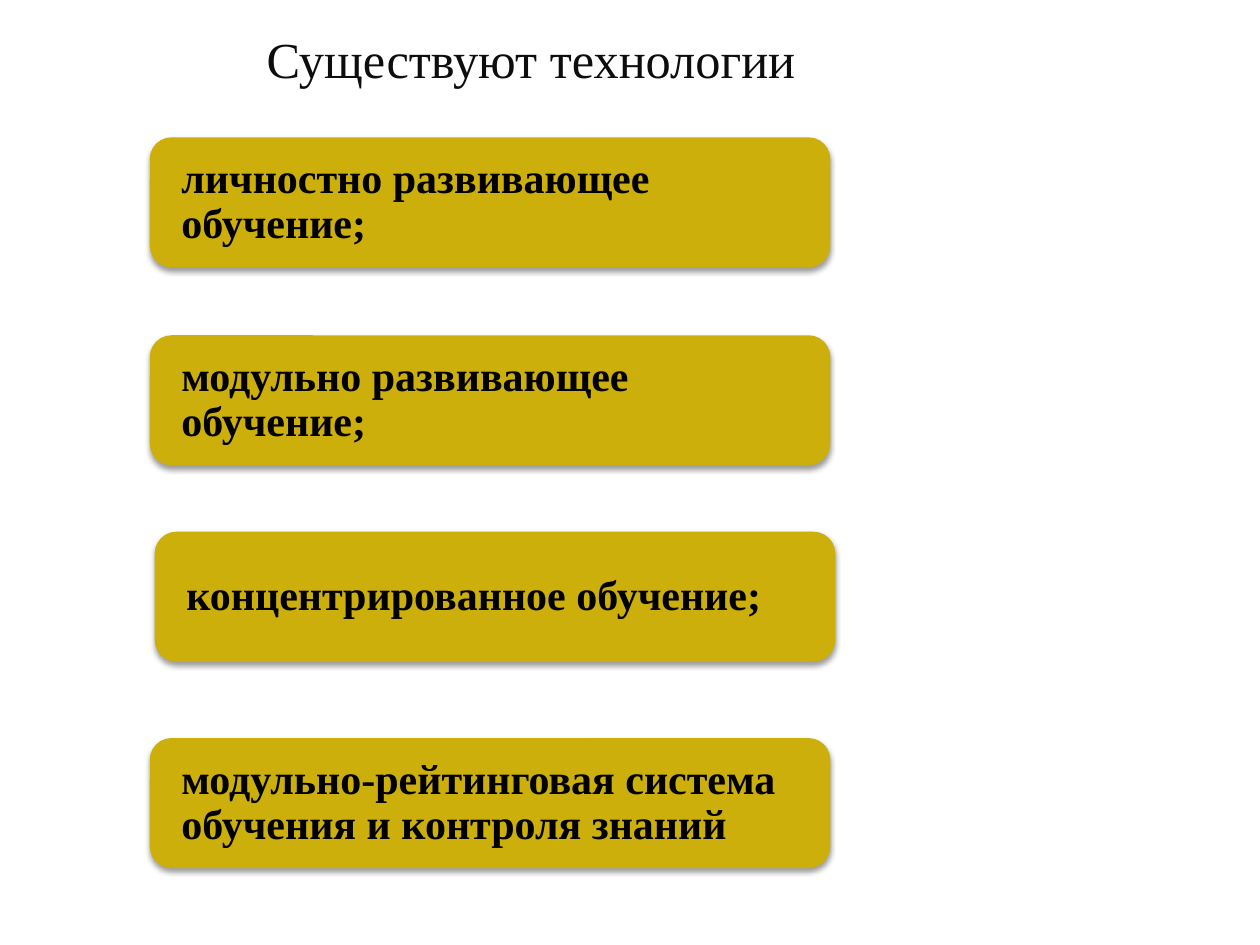
"""Build a slide that lists teaching technologies in rounded boxes."""
from lxml import etree
from pptx import Presentation
from pptx.dml.color import RGBColor
from pptx.enum.shapes import MSO_SHAPE as Shape
from pptx.enum.text import MSO_ANCHOR as Anchor, PP_ALIGN as Align
from pptx.oxml.ns import qn
from pptx.util import Cm, Pt

TITLE = "Существуют технологии"
LEFT, SHIFTED = 3.02, 3.12
BOXES = [
    ("личностно развивающее обучение;", LEFT, 2.77),
    ("модульно развивающее обучение;", LEFT, 6.76),
    ("концентрированное обучение;", SHIFTED, 10.72),
    ("модульно-рейтинговая система обучения и контроля знаний", LEFT, 14.88),
]
BOX_W, BOX_H = 13.72, 2.62
FONT = "Times New Roman"
TITLE_FONT = {"name": FONT, "size": Pt(28.8), "bold": False}
BOX_FONT = {"name": FONT, "size": Pt(24), "bold": True}
TITLE_FRAME = {"word_wrap": True, "vertical_anchor": Anchor.MIDDLE}
BOX_FRAME = TITLE_FRAME | {
    "margin_left": Cm(0.51), "margin_right": Cm(0.51),
    "margin_top": 0, "margin_bottom": 0,
}
SHADOW = {"blurRad": Pt(3.1), "dist": Pt(2), "dir": 90 * 60000, "rotWithShape": 0}


def rgb(color):
    return RGBColor.from_string(color)


def apply(obj, values):
    for name, value in values.items():
        setattr(obj, name, value)


def write(sp, text, frame, para, font, color):
    tf = sp.text_frame
    apply(tf, frame)
    p = tf.paragraphs[0]
    apply(p, para)
    r = p.add_run()
    r.text = text
    apply(r.font, font)
    r.font.color.rgb = rgb(color)


def add_shadow(sp, color, opacity):
    sp.shadow.inherit = False
    effects = sp._element.spPr.find(qn("a:effectLst"))
    shadow = etree.SubElement(effects, qn("a:outerShdw"))
    for name, value in SHADOW.items():
        shadow.set(name, str(value))
    clr = etree.SubElement(shadow, qn("a:srgbClr"), val=color)
    etree.SubElement(clr, qn("a:alpha"), val=str(opacity * 1000))


def add_box(s, text, left, top):
    sp = s.shapes.add_shape(Shape.ROUNDED_RECTANGLE, Cm(left), Cm(top), Cm(BOX_W), Cm(BOX_H))
    sp.fill.solid()
    sp.fill.fore_color.rgb = rgb("CCAF0A")
    sp.line.fill.background()
    add_shadow(sp, "000000", 38)
    para = {"alignment": Align.LEFT, "line_spacing": 0.9}
    write(sp, text, BOX_FRAME, para, BOX_FONT, "000000")


def main():
    prs = Presentation()
    prs.slide_width, prs.slide_height = Cm(25.4), Cm(19.05)
    s = prs.slides.add_slide(prs.slide_layouts[6])
    title = s.shapes.add_textbox(Cm(2.97), Cm(0.41), Cm(15.47), Cm(1.55))
    write(title, TITLE, TITLE_FRAME, {"alignment": Align.CENTER}, TITLE_FONT, "0D0D0D")
    for text, left, top in BOXES:
        add_box(s, text, left, top)
    prs.save("out.pptx")


if __name__ == "__main__":
    main()
